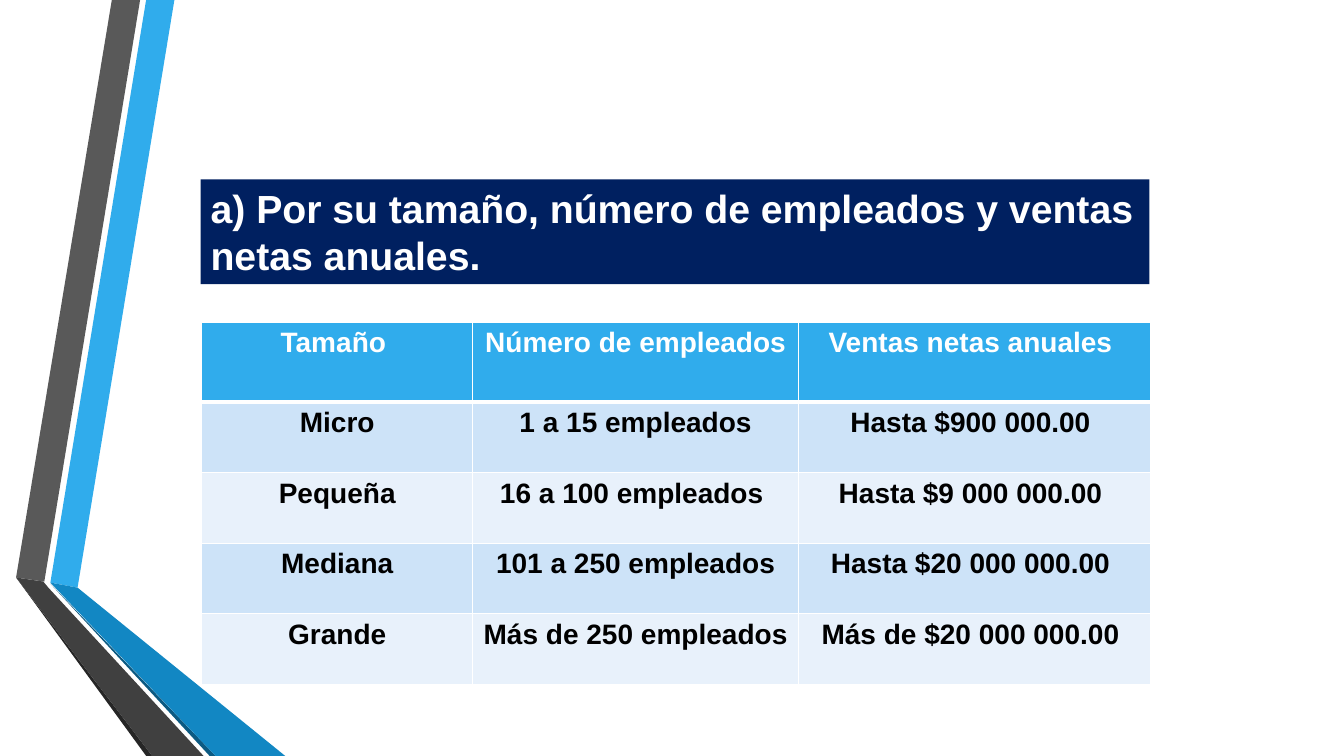
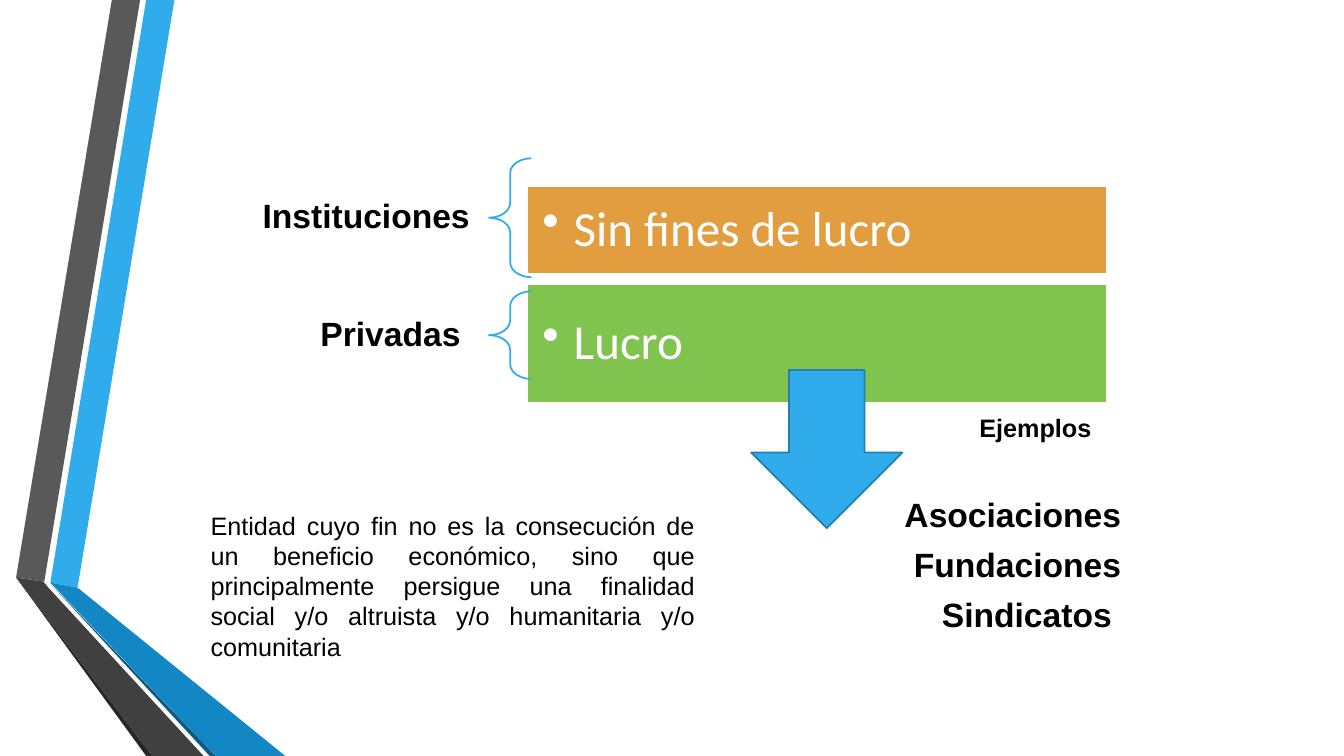
from lxml.etree import SubElement
from pptx import Presentation
from pptx.dml.color import RGBColor
from pptx.enum.shapes import MSO_SHAPE
from pptx.enum.text import MSO_ANCHOR, PP_ALIGN
from pptx.oxml.ns import qn
from pptx.util import Pt

PX = 9144  # 100 px to the inch

BLUE, NAVY, WHITE, BLACK = "30ACEC", "002060", "FFFFFF", "000000"
ORANGE, GREEN, EDGE = "E29D3E", "80C34F", "247FAF"
HEAD, BANDS = BLUE, ("CDE3F8", "E8F1FB")

RIBBONS = [
    (BLUE, [(50, 578), (77, 583), (173, 0), (145, 0)]),
    ("595959", [(139, 0), (111, 0), (16, 573), (44, 577)]),
    ("262626", [(16, 573), (145, 750), (151, 750)]),
    ("0C5A82", [(50, 579), (208, 750), (214, 750)]),
    ("1287C3", [(50, 578), (214, 750), (283, 750), (77, 583)]),
    ("404040", [(16, 573), (151, 750), (202, 750), (48, 583), (43, 577)]),
]

TITLE = {"size": Pt(28), "name": "Arial", "bold": True}
CELL = {"size": Pt(20), "name": "Arial", "bold": True}
LABEL = {"size": Pt(24), "name": "Arial", "bold": True}
NOTE = {"size": Pt(18), "name": "Arial", "bold": False}
TAG = {"size": Pt(18), "name": "Arial", "bold": True}
BAR = {"size": Pt(35), "name": "Calibri", "bold": False}

SPACED = {"line_spacing": 0.9, "space_after": Pt(10)}
RIGHT = {"alignment": PP_ALIGN.RIGHT, **SPACED}
LEFT = {"alignment": PP_ALIGN.LEFT}

SIZES = [
    ("Tamaño ", "Número de empleados ", "Ventas netas anuales "),
    ("Micro", "1 a 15 empleados", "Hasta $900 000.00 "),
    ("Pequeña", "16 a 100 empleados ", "Hasta $9 000 000.00 "),
    ("Mediana", "101 a 250 empleados", "Hasta $20 000 000.00 "),
    ("Grande", "Más de 250 empleados ", "Más de $20 000 000.00 "),
]


def tint(code):
    return RGBColor.from_string(code)


def apply(target, values):
    for key, value in values.items():
        setattr(target, key, value)


def scale(*lengths):
    return [n * PX for n in lengths]


def paint(shape, fill=None, line=None):
    shape.shadow.inherit = False
    if fill:
        shape.fill.solid()
        shape.fill.fore_color.rgb = tint(fill)
    else:
        shape.fill.background()
    if line:
        shape.line.color.rgb = tint(line)
        shape.line.width = Pt(1.25)
    else:
        shape.line.fill.background()


def write(frame, lines, font, color, layout, indent=0, bullet=False):
    """Fill a frame with one paragraph per line; a bullet hangs in the indent."""
    for i, line in enumerate(lines):
        para = frame.add_paragraph() if i else frame.paragraphs[0]
        apply(para, layout)
        run = para.add_run()
        run.text = line
        apply(run.font, font)
        run.font.color.rgb = tint(color)
        if indent:
            props = para._p.get_or_add_pPr()
            props.set("marL", str(indent * PX))
            props.set("indent", str(-indent * PX if bullet else 0))
            if bullet:
                SubElement(props, qn("a:buChar"), char="•")


def inset(frame, side, top, anchor):
    apply(frame, {
        "word_wrap": True, "vertical_anchor": anchor,
        "margin_left": side * PX, "margin_right": side * PX,
        "margin_top": top * PX, "margin_bottom": top * PX,
    })


def block(slide, kind, box, fill=None, line=None):
    shape = slide.shapes.add_shape(kind, *scale(*box))
    paint(shape, fill, line)
    return shape


def text(slide, box, lines, font, layout, pad=(10, 5),
         anchor=MSO_ANCHOR.TOP, indent=0):
    frame = slide.shapes.add_textbox(*scale(*box)).text_frame
    inset(frame, *pad, anchor)
    write(frame, lines, font, BLACK, layout, indent)


def label(slide, box, lines, indent=0):
    text(slide, box, lines, LABEL, RIGHT, (19, 7), MSO_ANCHOR.MIDDLE, indent)


def bar(slide, top, height, fill, words):
    shape = block(slide, MSO_SHAPE.RECTANGLE, (523, top, 575, height), fill, WHITE)
    inset(shape.text_frame, 15, 15, MSO_ANCHOR.MIDDLE)
    write(shape.text_frame, [words], BAR, WHITE, {**LEFT, **SPACED}, 31, True)


def brace(slide, top, height):
    shape = block(slide, MSO_SHAPE.LEFT_BRACE, (485, top, 42, height), line=BLUE)
    shape.adjustments[0] = 0.35


def border(cell, widths):
    """Draw white cell edges, with widths in points by side."""
    props = cell._tc.get_or_add_tcPr()
    for side, width in widths.items():
        edge = SubElement(props, qn(f"a:ln{side}"), w=str(Pt(width)))
        fill = SubElement(edge, qn("a:solidFill"))
        SubElement(fill, qn("a:srgbClr"), val=WHITE)


def grid(slide, rows, left, top, widths, heights):
    box = scale(left, top, sum(widths), sum(heights))
    table = slide.shapes.add_table(len(rows), len(widths), *box).table
    for col, width in zip(table.columns, widths):
        col.width = width * PX
    for r, (row, height) in enumerate(zip(rows, heights)):
        table.rows[r].height = height * PX
        for c, words in enumerate(row):
            cell = table.cell(r, c)
            border(cell, {"L": 1, "R": 1, "T": 3 if r == 1 else 1,
                          "B": 1 if r else 3})
            cell.fill.solid()
            cell.fill.fore_color.rgb = tint(BANDS[(r - 1) % 2] if r else HEAD)
            write(cell.text_frame, [words], CELL, BLACK if r else WHITE,
                  {"alignment": PP_ALIGN.CENTER})


def dress(layout, slide):
    """Draw the ribbons with the slide's builder and move them to the layout."""
    for fill, points in RIBBONS:
        pen = slide.shapes.build_freeform(*points[0], scale=PX)
        pen.add_line_segments(points[1:], close=True)
        shape = pen.convert_to_shape()
        paint(shape, fill)
        layout.element.cSld.spTree.append(shape.element)


def sizes(slide):
    title = block(slide, MSO_SHAPE.RECTANGLE, (199, 178, 941, 104), NAVY)
    inset(title.text_frame, 10, 5, MSO_ANCHOR.TOP)
    write(title.text_frame,
          ["a) Por su tamaño, número de empleados y ventas netas anuales."],
          TITLE, WHITE, LEFT)
    grid(slide, SIZES, 200, 320, [269, 323, 349], [79] + [70] * 4)


def aims(slide):
    label(slide, (198, 157, 287, 118), ["Instituciones"])
    label(slide, (198, 295, 287, 76), ["Privadas "])
    bar(slide, 185, 87, ORANGE, "Sin fines de lucro")
    bar(slide, 282, 118, GREEN, "Lucro")
    brace(slide, 157, 118)
    brace(slide, 289, 87)
    block(slide, MSO_SHAPE.DOWN_ARROW, (745, 367, 150, 157), BLUE, EDGE)
    text(slide, (199, 501, 500, 162),
         ["Entidad cuyo fin no es la consecución de un beneficio económico, sino "
          "que principalmente persigue una finalidad social y/o altruista y/o "
          "humanitaria y/o comunitaria"],
         NOTE, {"alignment": PP_ALIGN.JUSTIFY})
    label(slide, (777, 525, 354, 74),
          ["Asociaciones", "Fundaciones", "Sindicatos "], 50)
    text(slide, (956, 404, 142, 40), ["Ejemplos"], TAG,
         {"alignment": PP_ALIGN.CENTER})


def main():
    deck = Presentation()
    deck.slide_width, deck.slide_height = scale(1333, 750)
    blank = deck.slide_layouts[6]
    first, second = (deck.slides.add_slide(blank) for _ in range(2))
    dress(blank, first)
    sizes(first)
    aims(second)
    deck.save("out.pptx")


if __name__ == "__main__":
    main()
